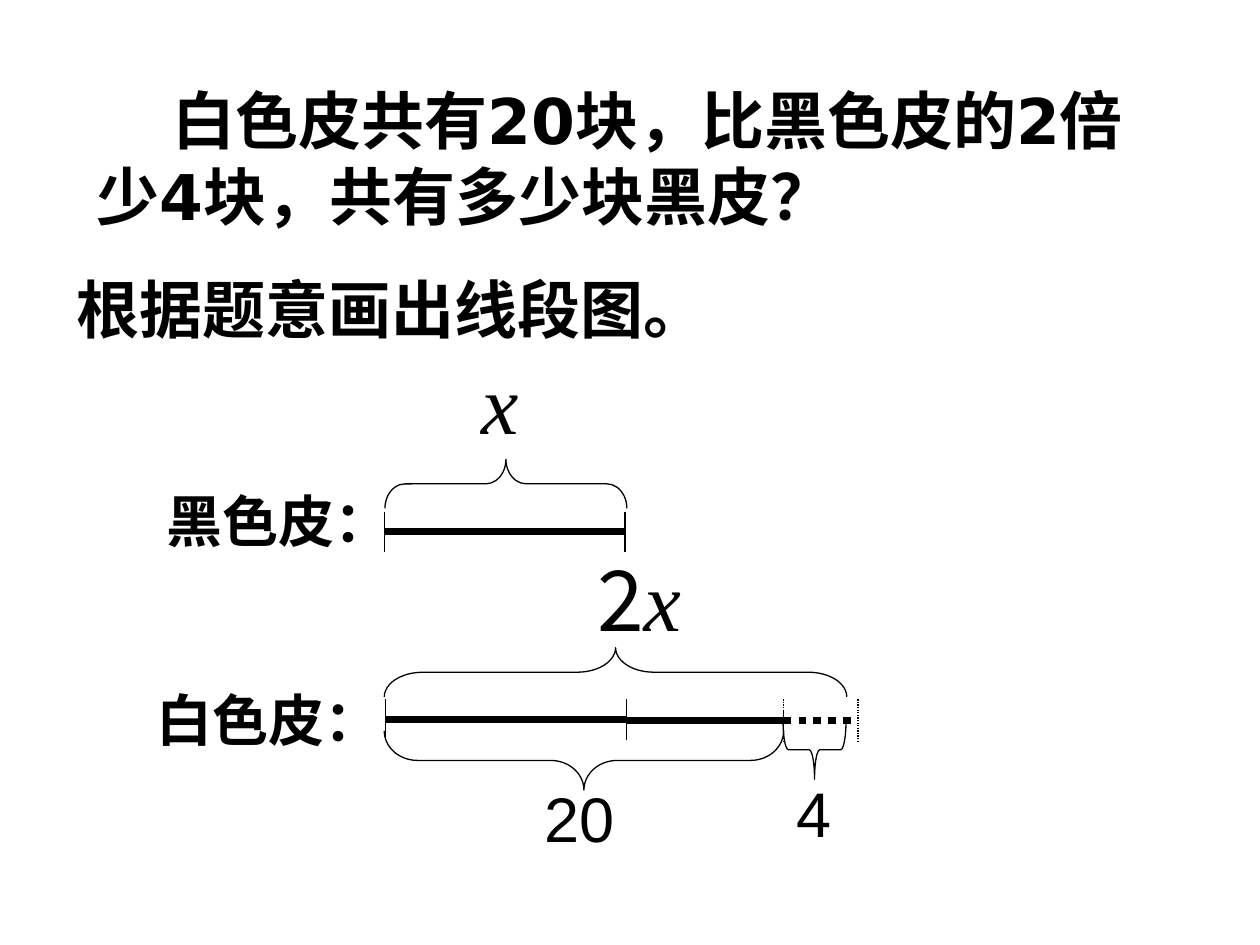
from lxml import etree
from pptx import Presentation
from pptx import util as u
from pptx.dml.color import RGBColor
from pptx.enum import dml, shapes, text
from pptx.oxml.ns import qn

PX = 9144
BLACK = "000000"


def paint(fill, colour):
    fill.solid()
    fill.fore_color.rgb = RGBColor.from_string(colour)


def write(words, box=None, paragraph=None, size=36, font="Arial", bold=False, italic=False, indent=0):
    if paragraph is None:
        frame = slide.shapes.add_textbox(*[n * PX for n in box]).text_frame
        frame.word_wrap = True
        frame.auto_size = text.MSO_AUTO_SIZE.SHAPE_TO_FIT_TEXT
        paragraph = frame.paragraphs[0]
        if indent:
            paragraph._p.get_or_add_pPr().set("indent", str(indent * PX))
    run = paragraph.add_run()
    run.text = words
    run.font.size = u.Pt(size)
    run.font.bold = bold
    run.font.italic = italic
    run.font.name = font
    paint(run.font.fill, BLACK)
    etree.SubElement(run._r.get_or_add_rPr(), qn("a:ea")).set("typeface", font)
    return paragraph


prs = Presentation()
prs.slide_width = 1000 * PX
prs.slide_height = 750 * PX
slide = prs.slides.add_slide(prs.slide_layouts[6])

write("白色皮共有20块，比黑色皮的2倍少4块，共有多少块黑皮？", (67, 60, 882, 131),
      font="DejaVu Sans", bold=True, indent=60)
write("根据题意画出线段图。", (51, 210, 638, 70), bold=True)

for label, left, top in [("黑色皮：", 122, 381), ("白色皮：", 114, 539)]:
    write(label, (left, top, 283, 63), size=32, font="DejaVu Sans", bold=True)

write("x", (372, 273, 110, 90), size=48, font="Times New Roman", italic=True)
double = write("2", (464, 430, 110, 212), size=48, font="Noto Sans CJK JP")
write("x", paragraph=double, size=48, font="Times New Roman", italic=True)

for count, left, top in [("20", 422, 614), ("4", 622, 610)]:
    write(count, (left, top, 142, 70))

segments = [
    (305, 496, 422, 16, False),
    (306, 497, 571, 16, False),
    (497, 622, 572, 8, False),
    (622, 681, 572, 17, True),
]
for start, end, y, tick, dotted in segments:
    strokes = [
        (start, y, end, y, 4.25),
        (start, y - tick, start, y + tick, 0.75),
        (end, y - tick, end, y + tick, 0.75),
    ]
    for x1, y1, x2, y2, weight in strokes:
        stroke = slide.shapes.add_connector(
            shapes.MSO_CONNECTOR.STRAIGHT, x1 * PX, y1 * PX, x2 * PX, y2 * PX)
        paint(stroke.line.fill, BLACK)
        stroke.line.width = u.Pt(weight)
        if dotted:
            stroke.line.dash_style = dml.MSO_LINE.ROUND_DOT
        etree.SubElement(stroke._element.spPr, qn("a:effectLst"))

braces = [
    (382, 288, 39, 192, 90, 0.41),
    (469, 350, 39, 367, 90, 0.78),
    (440, 445, 47, 317, 270, 0.56),
    (623, 570, 47, 50, 270, 0.09),
]
for left, top, width, height, turn, curl in braces:
    brace = slide.shapes.add_shape(
        shapes.MSO_SHAPE.LEFT_BRACE, left * PX, top * PX, width * PX, height * PX)
    brace.rotation = turn
    brace.adjustments[0] = curl
    brace.adjustments[1] = 0.5
    brace.shadow.inherit = False
    brace.fill.background()
    paint(brace.line.fill, BLACK)
    brace.line.width = u.Pt(0.75)

prs.save("out.pptx")
